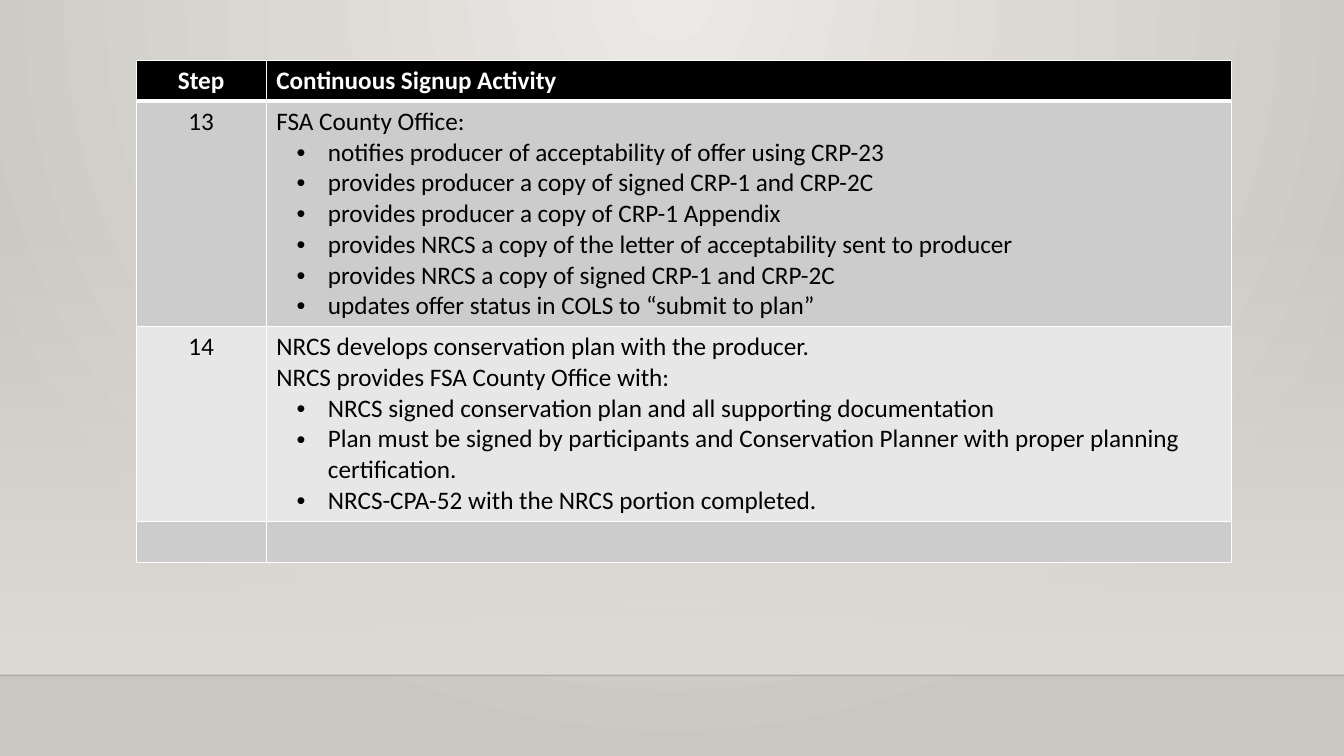
import pptx
import pptx.util
import pptx.dml.color
import pptx.enum.shapes
import pptx.enum.text
import pptx.oxml
import pptx.oxml.ns
from dataclasses import dataclass

Cm, Pt = pptx.util.Cm, pptx.util.Pt
qn = pptx.oxml.ns.qn
NAMESPACE = pptx.oxml.ns.nsdecls("a")

# Content: a line that starts with BULLET becomes a bulleted paragraph
BULLET = "• "
STEPS = [
    ("Step", ["Continuous Signup Activity"]),
    ("13", [
        "FSA County Office:",
        "• notifies producer of acceptability of offer using CRP-23",
        "• provides producer a copy of signed CRP-1 and CRP-2C",
        "• provides producer a copy of CRP-1 Appendix",
        "• provides NRCS a copy of the letter of acceptability sent to producer",
        "• provides NRCS a copy of signed CRP-1 and CRP-2C",
        "• updates offer status in COLS to “submit to plan”",
    ]),
    ("14", [
        "NRCS develops conservation plan with the producer.",
        "NRCS provides FSA County Office with:",
        "• NRCS signed conservation plan and all supporting documentation",
        "• Plan must be signed by participants and Conservation Planner "
        "with proper planning certification.",
        "• NRCS-CPA-52 with the NRCS portion completed.",
    ]),
    ("", [""]),
]
ROW_HEIGHTS = [Cm(1.03), Cm(5.68), Cm(4.9), Cm(1.03)]
COLUMN_WIDTHS = [Cm(3.28), Cm(24.32)]
TABLE_LEFT, TABLE_TOP = Cm(3.43), Cm(1.52)
WALL_TOP, FLOOR_TOP = Cm(5.61), Cm(17.02)


@dataclass(frozen=True)
class Theme:
    font: str = "Calibri"
    size: int = 18
    glow: str = "ECEAE7"
    edge: str = "CAC7C1"
    wall: str = "DFDBD5"
    floor_line: str = "000001"
    header: str = "000000"
    header_text: str = "FFFFFF"
    text: str = "000000"
    border: str = "FFFFFF"
    bands: tuple = ("CCCCCC", "E7E7E7")


THEME = Theme()


def rgb(value):
    return pptx.dml.color.RGBColor.from_string(value)


def set_gradient(fill, first, last):
    fill.gradient()
    for stop, (position, color) in zip(fill.gradient_stops, [(0, first), (1, last)]):
        stop.position = position
        stop.color.rgb = rgb(color)


def set_alpha(color_element, percent):
    color_element.append(pptx.oxml.parse_xml(
        f'<a:alpha {NAMESPACE} val="{percent * 1000}"/>'))


def paint_background(page):
    set_gradient(page.background.fill, THEME.glow, THEME.edge)
    gradient = page.element.find(".//" + qn("a:gradFill"))
    gradient.replace(gradient.find(qn("a:lin")), pptx.oxml.parse_xml(
        f'<a:path {NAMESPACE} path="circle">'
        '<a:fillToRect l="43000" r="43000" b="100000"/></a:path>'))


def add_wall(page, width):
    wall = page.shapes.add_shape(pptx.enum.shapes.MSO_SHAPE.RECTANGLE,
                                 0, WALL_TOP, width, FLOOR_TOP - WALL_TOP)
    wall.shadow.inherit = False
    wall.line.fill.background()
    set_gradient(wall.fill, THEME.wall, THEME.wall)
    wall.fill.gradient_angle = 270
    set_alpha(wall.element.spPr.find(".//" + qn("a:srgbClr")), 0)


def add_floor_line(page, width):
    line = page.shapes.add_connector(pptx.enum.shapes.MSO_CONNECTOR.STRAIGHT,
                                     0, FLOOR_TOP, width, FLOOR_TOP)
    line.line.width = Pt(1)
    line.line.color.rgb = rgb(THEME.floor_line)
    properties = line.element.spPr
    set_alpha(properties.find(".//" + qn("a:srgbClr")), 20)
    properties.append(pptx.oxml.parse_xml(f"<a:effectLst {NAMESPACE}/>"))


def set_borders(cell, top, bottom):
    properties = cell._tc.get_or_add_tcPr()
    sides = [("L", 1), ("R", 1), ("T", top), ("B", bottom)]
    for index, (side, width) in enumerate(sides):
        properties.insert(index, pptx.oxml.parse_xml(
            f'<a:ln{side} {NAMESPACE} w="{Pt(width)}"><a:solidFill>'
            f'<a:srgbClr val="{THEME.border}"/></a:solidFill></a:ln{side}>'))


def add_bullet(para):
    properties = para._p.get_or_add_pPr()
    properties.set("marL", str(Cm(1.3)))
    properties.set("indent", str(-Cm(0.79)))
    properties.append(pptx.oxml.parse_xml(
        f'<a:buFont {NAMESPACE} typeface="Arial"/>'))
    properties.append(pptx.oxml.parse_xml(
        f'<a:buChar {NAMESPACE} char="{BULLET.strip()}"/>'))


def write_cell(cell, lines, is_header, centred):
    frame = cell.text_frame
    frame.text = "\n".join(line.removeprefix(BULLET) for line in lines)
    for para, line in zip(frame.paragraphs, lines):
        if line.startswith(BULLET):
            add_bullet(para)
        if centred:
            para.alignment = pptx.enum.text.PP_ALIGN.CENTER
        for span in para.runs:
            span.font.name = THEME.font
            span.font.size = Pt(THEME.size)
            span.font.bold = is_header
            span.font.color.rgb = rgb(THEME.header_text if is_header else THEME.text)


def add_step_table(page):
    table = page.shapes.add_table(
        len(STEPS), len(COLUMN_WIDTHS), TABLE_LEFT, TABLE_TOP,
        sum(COLUMN_WIDTHS), sum(ROW_HEIGHTS)).table
    table.first_row = table.horz_banding = False
    for column, width in zip(table.columns, COLUMN_WIDTHS):
        column.width = width
    for index, (step, activity) in enumerate(STEPS):
        table.rows[index].height = ROW_HEIGHTS[index]
        is_header = index == 0
        color = THEME.header if is_header else THEME.bands[(index - 1) % 2]
        for number, lines in enumerate([[step], activity]):
            cell = table.cell(index, number)
            write_cell(cell, lines, is_header, centred=number == 0)
            if is_header:
                cell.vertical_anchor = pptx.enum.text.MSO_ANCHOR.BOTTOM
            set_borders(cell, top=3 if index == 1 else 1, bottom=3 if is_header else 1)
            cell.fill.solid()
            cell.fill.fore_color.rgb = rgb(color)


def main():
    deck = pptx.Presentation()
    deck.slide_width, deck.slide_height = Cm(33.87), Cm(19.05)
    page = deck.slides.add_slide(deck.slide_layouts.get_by_name("Blank"))

    # Backdrop
    paint_background(page)
    add_wall(page, deck.slide_width)
    add_floor_line(page, deck.slide_width)

    # Steps
    add_step_table(page)
    deck.save("out.pptx")


if __name__ == "__main__":
    main()
